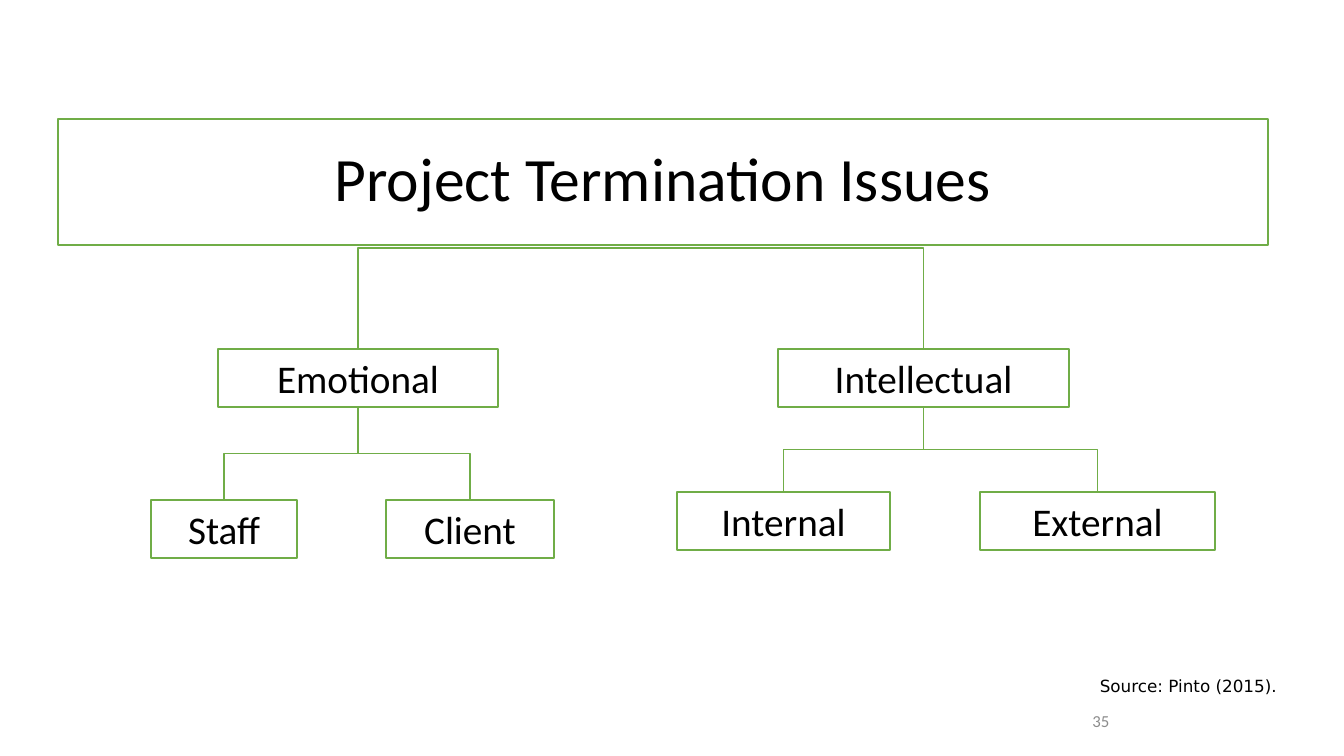
from dataclasses import dataclass

from pptx import Presentation
from pptx.dml.color import RGBColor
from pptx.enum.shapes import MSO_CONNECTOR, MSO_SHAPE
from pptx.enum.text import MSO_ANCHOR, MSO_AUTO_SIZE, PP_ALIGN
from pptx.oxml.ns import qn
from pptx.util import Pt
from lxml import etree

ELBOW = MSO_CONNECTOR.ELBOW
RECT = MSO_SHAPE.RECTANGLE
MIDDLE, TOP = MSO_ANCHOR.MIDDLE, MSO_ANCHOR.TOP
CENTER, LEFT = PP_ALIGN.CENTER, PP_ALIGN.LEFT
FIXED = MSO_AUTO_SIZE.NONE
TITLE_ONLY = 5
SCALE = 914400 / 100.8


@dataclass(frozen=True)
class Theme:
    ink: RGBColor = RGBColor(0, 0, 0)
    paper: RGBColor = RGBColor(255, 255, 255)
    green: RGBColor = RGBColor(0x70, 0xAD, 0x47)
    gray: RGBColor = RGBColor(0x8C, 0x8C, 0x8C)
    font: str = "Calibri"
    sans: str = "DejaVu Sans"
    head: int = 44
    body: int = 28
    small: int = 12
    line: int = 1


def emu(*sizes):
    return [round(size * SCALE) for size in sizes]


class Chart:
    """Draws an issue tree on one slide, with lengths in px."""

    def __init__(self, slide, theme):
        self.slide, self.theme = slide, theme

    def label(self, shape, text, size, color, font, align=CENTER, anchor=MIDDLE):
        frame = shape.text_frame
        frame.word_wrap = True
        frame.auto_size = FIXED
        frame.vertical_anchor = anchor
        para = frame.paragraphs[0]
        para.text = text
        para.alignment = align
        para.font.size = Pt(size)
        para.font.name = font
        para.font.color.rgb = color
        return para

    def frame(self, shape):
        """Give a shape the white fill and green outline."""
        shape.fill.solid()
        shape.fill.fore_color.rgb = self.theme.paper
        self.stroke(shape.line)

    def stroke(self, line):
        line.color.rgb = self.theme.green
        line.width = Pt(self.theme.line)

    def title(self, text, *area):
        look, shape = self.theme, self.slide.shapes.title
        shape.left, shape.top, shape.width, shape.height = emu(*area)
        self.frame(shape)
        para = self.label(shape, text, look.head, look.ink, look.font)
        para.line_spacing = 0.9

    def box(self, text, *area):
        look = self.theme
        shape = self.slide.shapes.add_shape(RECT, *emu(*area))
        shape.shadow.inherit = False
        self.frame(shape)
        self.label(shape, text, look.body, look.ink, look.font)

    def note(self, text, area, color, font, align, anchor):
        shape = self.slide.shapes.add_textbox(*emu(*area))
        self.label(shape, text, self.theme.small, color, font, align, anchor)

    def elbow(self, *ends):
        link = self.slide.shapes.add_connector(ELBOW, *emu(*ends))
        self.stroke(link.line)
        props = link.line._ln.getparent()
        etree.SubElement(props, qn("a:effectLst"))
        return props

    def branch(self, x, y, end_x, end_y):
        """Run sideways, then down."""
        props = self.elbow(x, y, end_x, end_y)
        props.find(qn("a:prstGeom")).set("prst", "bentConnector2")

    def fork(self, x, y, end_x, end_y):
        """Run down, sideways and down by turning an elbow a quarter."""
        mid_x, mid_y = (x + end_x) / 2, (y + end_y) / 2
        half_w, half_h = abs(end_x - x) / 2, (end_y - y) / 2
        right = end_x > x
        reach = half_h if right else -half_h
        props = self.elbow(mid_x + reach, mid_y - half_w,
                           mid_x - reach, mid_y + half_w)
        turn = 270 if right else 90
        props.find(qn("a:xfrm")).set("rot", str(turn * 60000))


def main():
    deck = Presentation()
    deck.slide_width, deck.slide_height = emu(1344, 756)
    theme = Theme()
    chart = Chart(deck.slides.add_slide(deck.slide_layouts[TITLE_ONLY]), theme)

    chart.title("Project Termination Issues", 58, 119, 1210, 126)

    root_x, root_y = 666, 248
    top, tall = 349, 58
    # Each group: name, left, width, child top, children (name, left, width)
    groups = [
        ("Emotional", 218, 280, 500,
         [("Staff", 151, 146), ("Client", 386, 168)]),
        ("Intellectual", 778, 291, 492,
         [("Internal", 677, 213), ("External", 980, 235)]),
    ]
    for name, left, width, low, kids in groups:
        mid = left + width / 2
        chart.box(name, left, top, width, tall)
        chart.branch(root_x, root_y, mid, top)
        for kid, kid_left, kid_width in kids:
            chart.box(kid, kid_left, low, kid_width, tall)
            chart.fork(mid, top + tall, kid_left + kid_width / 2, low)

    chart.note("35", (950, 701, 302, 40), theme.gray, theme.font, CENTER, MIDDLE)
    chart.note("Source: Pinto (2015).", (1090, 671, 240, 30),
               theme.ink, theme.sans, LEFT, TOP)
    deck.save("out.pptx")


if __name__ == "__main__":
    main()
